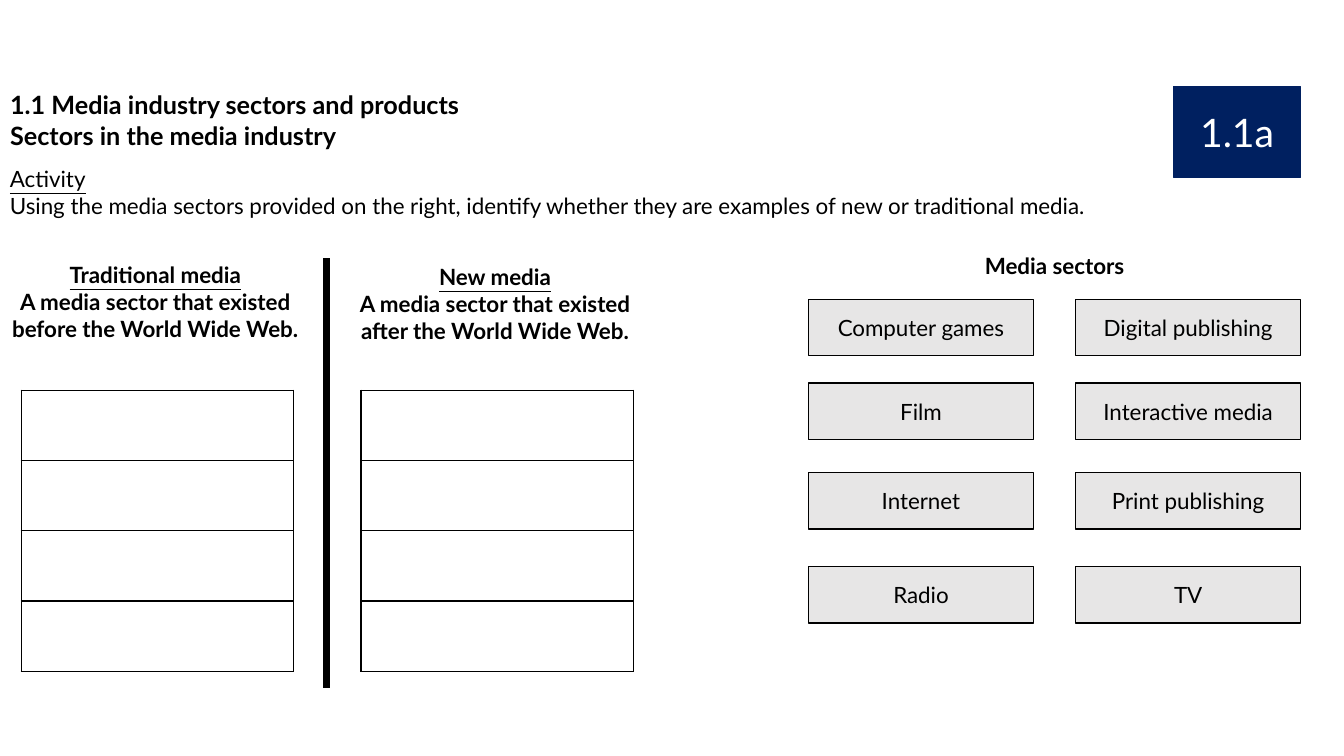
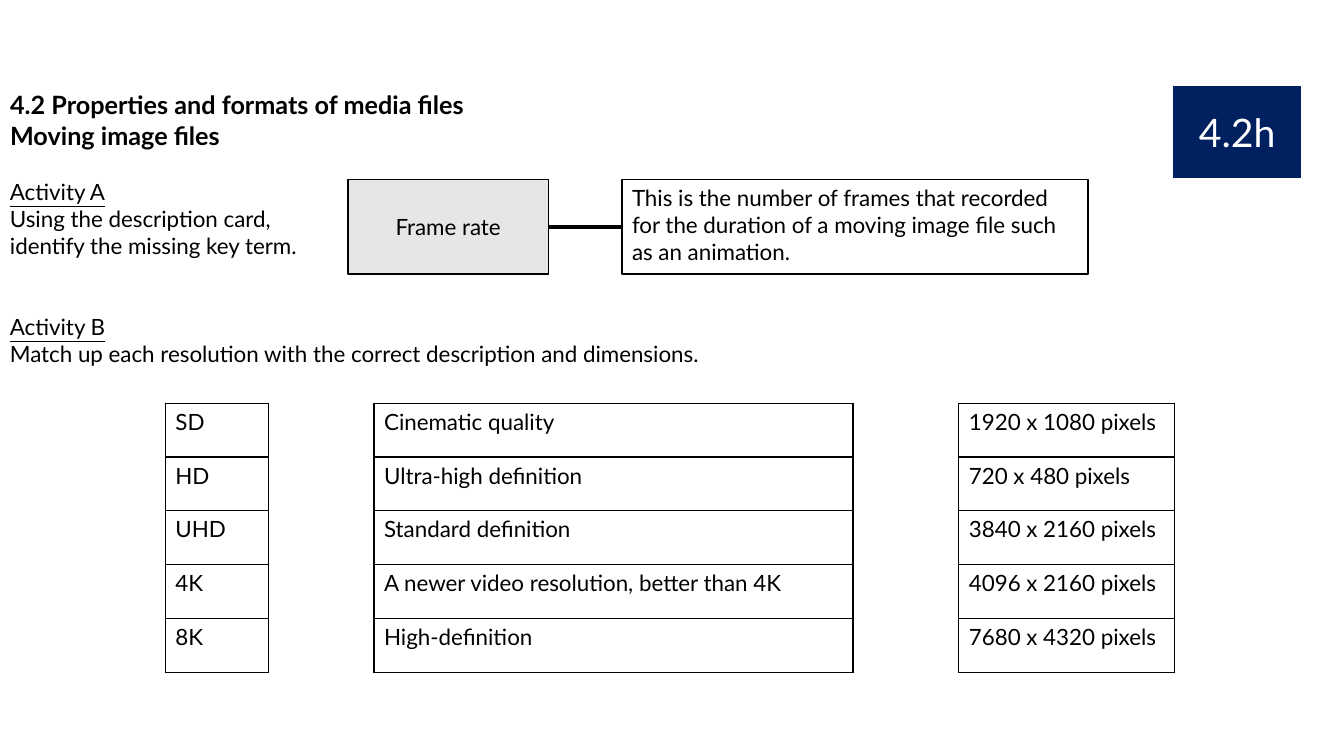
from dataclasses import dataclass

from lxml.etree import SubElement
from pptx import Presentation
from pptx.dml.color import RGBColor
from pptx.enum.shapes import MSO_CONNECTOR as Connector, MSO_SHAPE as Shape
from pptx.enum.text import MSO_ANCHOR as Anchor, MSO_AUTO_SIZE as AutoSize, PP_ALIGN as Align
from pptx.oxml import parse_xml
from pptx.oxml.ns import nsdecls, qn
from pptx.util import Inches, Pt

COLORS = {"ink": "000000", "card": "E7E6E6", "badge": "002060", "paper": "FFFFFF"}
BODY = {"name": "Lato", "size": Pt(16), "bold": False, "underline": False}
BOLD = BODY | {"bold": True}
TITLE = BOLD | {"size": Pt(18)}
BADGE = BODY | {"size": Pt(28)}

UNIT = Inches(0.1)  # one column or row of the page grid
PAGE_COLUMNS, PAGE_ROWS = 133.3, 75

SECTORS = [
    ("Computer games", "Digital publishing"),
    ("Film", "Interactive media"),
    ("Internet", "Print publishing"),
    ("Radio", "TV"),
]
RESOLUTIONS = [
    ("SD", "Cinematic quality", "1920 x 1080 pixels"),
    ("HD", "Ultra-high definition", "720 x 480 pixels"),
    ("UHD", "Standard definition", "3840 x 2160 pixels"),
    ("4K", "A newer video resolution, better than 4K", "4096 x 2160 pixels"),
    ("8K", "High-definition", "7680 x 4320 pixels"),
]


def grid(count):
    return round(count * UNIT)


@dataclass
class Box:
    """A region measured in columns and rows of the page grid."""
    left: float
    top: float
    width: float
    height: float

    def inner(self, left, top, width, height):
        return Box(self.left + left, self.top + top, width, height)

    def lengths(self):
        return [grid(n) for n in (self.left, self.top, self.width, self.height)]


def rgb(color):
    return RGBColor.from_string(COLORS[color])


def write(frame, lines, align=Align.LEFT, color="ink"):
    """Fill a text frame with one paragraph for each (text, format) pair."""
    frame.word_wrap = True
    for index, (text, style) in enumerate(lines):
        para = frame.add_paragraph() if index else frame.paragraphs[0]
        para.alignment = align
        span = para.add_run()
        span.text = text
        for name, value in style.items():
            setattr(span.font, name, value)
        span.font.color.rgb = rgb(color)


def add_text(page, box, lines, align=Align.LEFT):
    frame = page.shapes.add_textbox(*box.lengths()).text_frame
    write(frame, lines, align)
    frame.auto_size = AutoSize.SHAPE_TO_FIT_TEXT


def add_headed_text(page, box, heading, text, style=BODY, align=Align.LEFT):
    add_text(page, box, [(heading, style | {"underline": True}), (text, style)], align)


def add_card(page, box, text, fill="card", line="ink", color="ink", style=BODY,
             align=Align.CENTER, anchor=Anchor.MIDDLE):
    card = page.shapes.add_shape(Shape.RECTANGLE, *box.lengths())
    card.shadow.inherit = False
    if fill:
        card.fill.solid()
        card.fill.fore_color.rgb = rgb(fill)
    else:
        card.fill.background()
    card.line.color.rgb = rgb(line)
    card.line.width = Pt(1)
    card.text_frame.vertical_anchor = anchor
    write(card.text_frame, [(text, style)], align, color)
    return card


def add_line(page, start, end, width):
    line = page.shapes.add_connector(Connector.STRAIGHT, *map(grid, start + end))
    line.line.color.rgb = rgb("ink")
    line.line.width = Pt(width)
    SubElement(line._element.spPr, qn("a:effectLst"))
    return line


def set_borders(cell, drawn):
    """Draw the named sides of a cell (L, R, T, B) and clear the others."""
    properties = cell._tc.get_or_add_tcPr()
    for index, side in enumerate("LRTB"):
        paint = (f'<a:solidFill><a:srgbClr val="{COLORS["ink"]}"/></a:solidFill>'
                 if side in drawn else "<a:noFill/>")
        properties.insert(index, parse_xml(
            f'<a:ln{side} {nsdecls("a")} w="{Pt(1)}">{paint}</a:ln{side}>'))


def add_grid_table(page, box, rows, widths):
    """Add a ruled table; a text of None marks a cell in an open gap column."""
    frame = page.shapes.add_table(len(rows), len(widths), *box.lengths())
    table = frame.table
    table.first_row = table.horz_banding = False
    for column, width in zip(table.columns, widths):
        column.width = grid(width)
    for row, texts in zip(table.rows, rows):
        row.height = grid(box.height / len(rows))
        for cell, text in zip(row.cells, texts):
            cell.fill.background()
            set_borders(cell, "LR" if text is None else "LRTB")
            if text:
                write(cell.text_frame, [(text, BODY)])


def add_page(deck, code, *title_lines):
    """Add a page with its two-line title and the topic code badge."""
    page = deck.slides.add_slide(deck.slide_layouts.get_by_name("Title Only"))
    title = page.shapes.title
    title.left, title.top, title.width, title.height = Box(0, 8.4, 104.3, 7.1).lengths()
    frame = title.text_frame
    frame.auto_size = AutoSize.NONE
    frame.vertical_anchor = Anchor.TOP
    write(frame, [(line, TITLE) for line in title_lines])
    add_card(page, Box(116.4, 8.6, 12.6, 9), code, "badge", "badge", "paper", BADGE)
    return page


def add_media_column(page, box, heading, definition):
    """Place a definition at the top of the box and four answer rows at its foot."""
    add_headed_text(page, box.inner(0, 0, box.width, 9.1), heading, definition,
                    BOLD, Align.CENTER)
    width, height = 27, 27.9
    answers = box.inner(2.1, box.height - height, width, height)
    add_grid_table(page, answers, [[""]] * 4, [width])


def add_sector_cards(page, box):
    add_text(page, box.inner(-9.1, 0, 67, 3.7), [("Media sectors", BOLD)], Align.CENTER)
    width, height = 22.3, 5.6
    step = box.width - width
    for top, names in zip((5.2, 13.5, 22.4, 31.7), SECTORS):
        for column, name in enumerate(names):
            add_card(page, box.inner(column * step, top, width, height), name)


def add_key_term(page, box, term, description):
    """Join a term card at the left of the box to its description at the right."""
    term_card = add_card(page, box.inner(0, 0, 19.9, box.height), term)
    description_card = add_card(page, box.inner(27.2, 0, box.width - 27.2, box.height),
                                description, fill=None, align=Align.LEFT, anchor=Anchor.TOP)
    link = add_line(page, (0, 0), (0, 0), 3)
    link.begin_connect(term_card, 3)
    link.end_connect(description_card, 1)


def add_matching_table(page, box):
    gap = 10.5
    rows = [(name, None, description, None, size) for name, description, size in RESOLUTIONS]
    add_grid_table(page, box, rows, [10.2, gap, 47.5, gap, 21.4])


def build_sectors_page(deck):
    page = add_page(deck, "1.1a", "1.1 Media industry sectors and products",
                    "Sectors in the media industry")
    add_headed_text(page, Box(0, 15.9, 129, 6.4), "Activity",
                    "Using the media sectors provided on the right, identify whether "
                    "they are examples of new or traditional media.")
    add_media_column(page, Box(0, 25.4, 30.8, 41.2), "Traditional media",
                     "A media sector that existed before the World Wide Web.")
    add_line(page, (32.4, 25.6), (32.4, 68.3), 4.5)
    add_media_column(page, Box(33.7, 25.6, 30.8, 41), "New media",
                     "A media sector that existed after the World Wide Web.")
    add_sector_cards(page, Box(80.2, 24.5, 48.8, 37.3))


def build_files_page(deck):
    page = add_page(deck, "4.2h", "4.2 Properties and formats of media files",
                    "Moving image files")
    add_headed_text(page, Box(0, 17.2, 35.5, 9.1), "Activity A",
                    "Using the description card, identify the missing key term.")
    add_key_term(page, Box(34.5, 17.8, 73.4, 9.4), "Frame rate",
                 "This is the number of frames that recorded for the duration of a "
                 "moving image file such as an animation.")
    add_headed_text(page, Box(0, 30.6, 127.7, 6.4), "Activity B",
                    "Match up each resolution with the correct description and dimensions.")
    add_matching_table(page, Box(16.4, 40, 100.1, 26.7))


def main():
    deck = Presentation()
    deck.slide_width, deck.slide_height = grid(PAGE_COLUMNS), grid(PAGE_ROWS)
    build_sectors_page(deck)
    build_files_page(deck)
    deck.save("out.pptx")


if __name__ == "__main__":
    main()
